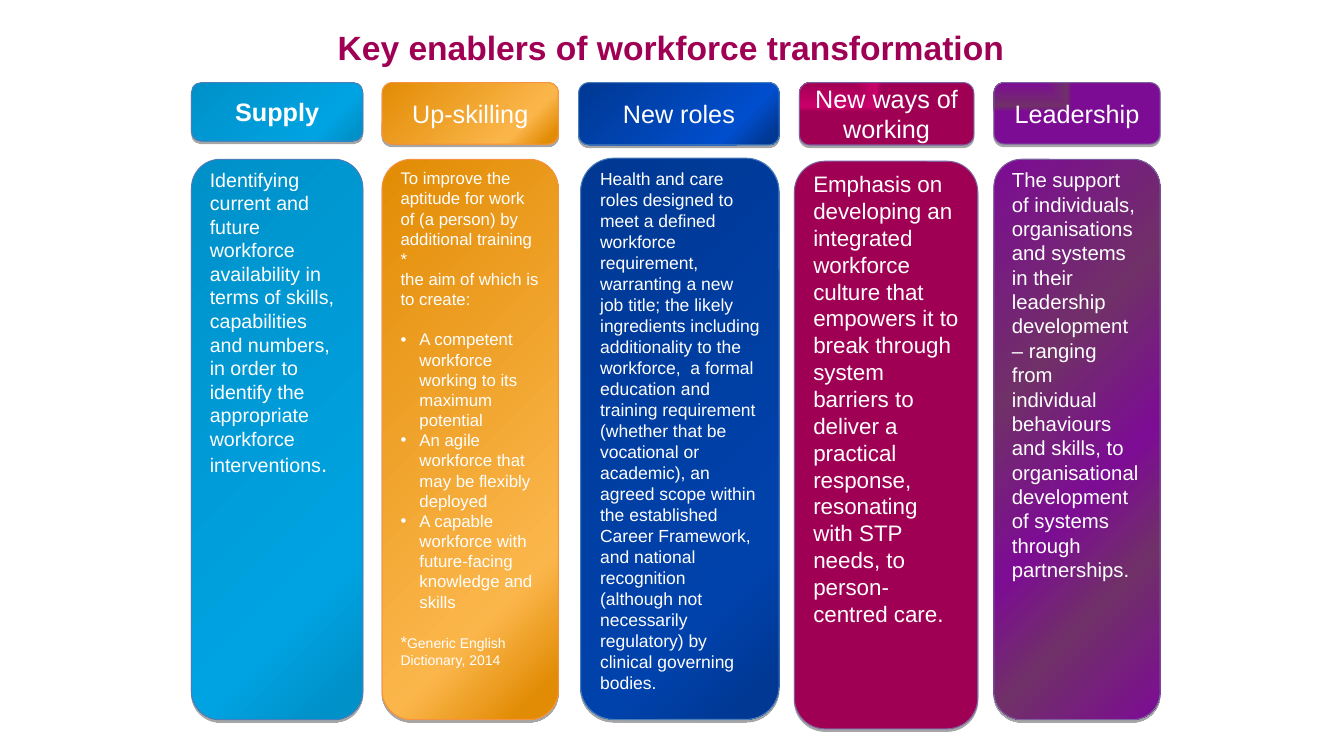
from lxml.etree import SubElement
from pptx import Presentation
from pptx.dml.color import RGBColor
from pptx.enum.shapes import MSO_SHAPE
from pptx.enum.text import MSO_ANCHOR, PP_ALIGN
from pptx.oxml.ns import qn
from pptx.util import Pt

WHITE = RGBColor(0xFF, 0xFF, 0xFF)
CRIMSON = RGBColor(0xA0, 0x00, 0x54)
PINK = RGBColor(0xCA, 0x00, 0x6A)
SKY = RGBColor(0x00, 0x91, 0xC9)
LIGHT_SKY = RGBColor(0x00, 0xA3, 0xE2)
AMBER = RGBColor(0xE2, 0x8C, 0x05)
LIGHT_AMBER = RGBColor(0xFB, 0xB6, 0x4B)
NAVY = RGBColor(0x00, 0x38, 0x93)
ROYAL = RGBColor(0x00, 0x42, 0xAC)
BRIGHT_ROYAL = RGBColor(0x00, 0x4E, 0xCD)
PURPLE = RGBColor(0x7D, 0x0C, 0x94)
PLUM = RGBColor(0x70, 0x30, 0x68)
BLUE_EDGE = RGBColor(0x4A, 0x7E, 0xBB)
ORANGE_EDGE = RGBColor(0xF6, 0x92, 0x40)
VIOLET_EDGE = RGBColor(0x7D, 0x60, 0xA0)

# Content
TITLE = "Key enablers of workforce transformation"
HEAD_TOP = 59


def glow(base, light):
    return [(0, base), (77, light), (94, base), (100, base)]


# Box places are (left, top, width, height); paragraphs are lists of (text, size)
COLUMNS = [
    dict(name="Supply", bold=True, edge=BLUE_EDGE,
         head=(136.8, HEAD_TOP, 122.4, 41.8), head_fill=glow(SKY, LIGHT_SKY),
         body=(136.8, 113.8, 122.4, 400.3), body_fill=glow(SKY, LIGHT_SKY),
         paragraphs=[[("Identifying current and future workforce availability in terms of "
                       "skills, capabilities and numbers, in order to identify the "
                       "appropriate workforce interventions", 14), (".", 16)]]),
    dict(name="Up-skilling", edge=ORANGE_EDGE,
         head=(272.9, HEAD_TOP, 126, 43.9), head_fill=glow(AMBER, LIGHT_AMBER),
         body=(272.9, 113.8, 126, 400.3), body_fill=glow(AMBER, LIGHT_AMBER),
         paragraphs=[
             [("To improve the aptitude for work of (a person) by additional training *", 12)],
             [("the aim of which is to create:", 12)],
             [("A competent workforce working to its maximum potential", 12)],
             [("An agile workforce that may be flexibly deployed", 12)],
             [("A capable workforce with future-facing knowledge and skills", 12)],
             [("*", 12), ("Generic English Dictionary, 2014", 10)]],
         bullets=(2, 3, 4), gaps=(2, 5)),
    dict(name="New roles", edge=BLUE_EDGE,
         head=(413.3, HEAD_TOP, 143.3, 44.6), head_fill=glow(NAVY, BRIGHT_ROYAL),
         body=(414.7, 113, 141.8, 401), body_fill=glow(NAVY, ROYAL),
         paragraphs=[[("Health and care roles designed to meet a defined workforce "
                       "requirement, warranting a new job title; the likely ingredients "
                       "including additionality to the workforce,  a formal education and "
                       "training requirement (whether that be vocational or academic), an "
                       "agreed scope within the established Career Framework, and national "
                       "recognition (although not necessarily regulatory) by clinical "
                       "governing bodies.", 12.5)]]),
    dict(name="New ways of working", edge=VIOLET_EDGE, corner=True,
         head=(571, HEAD_TOP, 124.6, 44.6), head_fill=glow(CRIMSON, PINK),
         body=(567.4, 115.2, 131, 405.4), body_fill=CRIMSON,
         paragraphs=[[("Emphasis on developing an integrated workforce culture that empowers "
                       "it to break through system barriers to deliver a practical response, "
                       "resonating with STP needs, to person-centred care.", 16)]]),
    dict(name="Leadership", edge=VIOLET_EDGE, corner=True,
         head=(709.9, HEAD_TOP, 118.8, 43.9), head_fill=glow(PURPLE, PLUM),
         body=(709.9, 113.8, 118.8, 400.3),
         body_fill=[(0, PURPLE), (35, PLUM), (59, PURPLE), (76, PLUM), (100, PURPLE)],
         paragraphs=[[("The support of individuals, organisations and systems in their "
                       "leadership development – ranging from individual behaviours and "
                       "skills, to organisational development of systems through "
                       "partnerships.", 14.5)]]),
]


def add_xml(parent, tag, **attributes):
    return SubElement(parent, qn(tag), {key: str(value) for key, value in attributes.items()})


def write(frame, paragraphs, color=WHITE, bold=False, align=PP_ALIGN.LEFT,
          anchor=MSO_ANCHOR.TOP, insets=(7.2, 0, 7.2, 3.6), bullets=(), gaps=()):
    frame.word_wrap = True
    frame.vertical_anchor = anchor
    (frame.margin_left, frame.margin_top,
     frame.margin_right, frame.margin_bottom) = map(Pt, insets)
    for index, runs in enumerate(paragraphs):
        para = frame.paragraphs[0] if index == 0 else frame.add_paragraph()
        para.alignment = align
        if index in gaps:
            para.space_before = Pt(14.4)
        if index in bullets:
            properties = para._p.get_or_add_pPr()
            properties.set("marL", str(Pt(13.5)))
            properties.set("indent", str(-Pt(13.5)))
            add_xml(properties, "a:buFont", typeface="Arial")
            add_xml(properties, "a:buChar", char="•")
        for text, size in runs:
            span = para.add_run()
            span.text = text
            span.font.name = "Arial"
            span.font.size = Pt(size)
            span.font.bold = bold
            span.font.color.rgb = color


def set_gradient(shape, stops, corner):
    shape.fill.gradient()
    gradient = shape._element.spPr.find(qn("a:gradFill"))
    for child in list(gradient):
        gradient.remove(child)
    stop_list = add_xml(gradient, "a:gsLst")
    for position, color in stops:
        stop = add_xml(stop_list, "a:gs", pos=position * 1000)
        add_xml(stop, "a:srgbClr", val=color)
    if corner:
        shade = add_xml(gradient, "a:path", path="shape")
        add_xml(shade, "a:fillToRect", r=100000, b=100000)
    else:
        add_xml(gradient, "a:lin", ang=45 * 60000, scaled=0)


def add_panel(page, place, fill, edge, corner=False):
    panel = page.shapes.add_shape(MSO_SHAPE.ROUNDED_RECTANGLE, *map(Pt, place))
    panel.adjustments[0] = 0.167
    if isinstance(fill, list):
        set_gradient(panel, fill, corner)
    else:
        panel.fill.solid()
        panel.fill.fore_color.rgb = fill
    panel.line.color.rgb = edge
    panel.line.width = Pt(0.75)
    # Crisp shadow straight below
    panel.shadow.inherit = False
    effects = panel._element.spPr.find(qn("a:effectLst"))
    shadow = add_xml(effects, "a:outerShdw", blurRad=0, dist=Pt(1.8),
                     dir=90 * 60000, rotWithShape=0)
    shade = add_xml(shadow, "a:srgbClr", val="000000")
    add_xml(shade, "a:alpha", val=35000)
    return panel


def main():
    deck = Presentation()
    deck.slide_width, deck.slide_height = Pt(960), Pt(540)
    page = deck.slides.add_slide(deck.slide_layouts[6])

    # Title
    box = page.shapes.add_textbox(Pt(133.2), Pt(16), Pt(692), Pt(34.6))
    write(box.text_frame, [[(TITLE, 24)]], color=CRIMSON, bold=True,
          align=PP_ALIGN.CENTER, anchor=MSO_ANCHOR.MIDDLE, insets=(7.2, 0, 7.2, 0))

    # Columns: a heading above a panel of text
    for column in COLUMNS:
        head = add_panel(page, column["head"], column["head_fill"], column["edge"],
                         column.get("corner", False))
        write(head.text_frame, [[(column["name"], 18)]], bold=column.get("bold", False),
              align=PP_ALIGN.CENTER, anchor=MSO_ANCHOR.MIDDLE, insets=(7.2, 3.6, 7.2, 3.6))
        body = add_panel(page, column["body"], column["body_fill"], column["edge"])
        write(body.text_frame, column["paragraphs"],
              bullets=column.get("bullets", ()), gaps=column.get("gaps", ()))

    deck.save("out.pptx")


if __name__ == "__main__":
    main()
